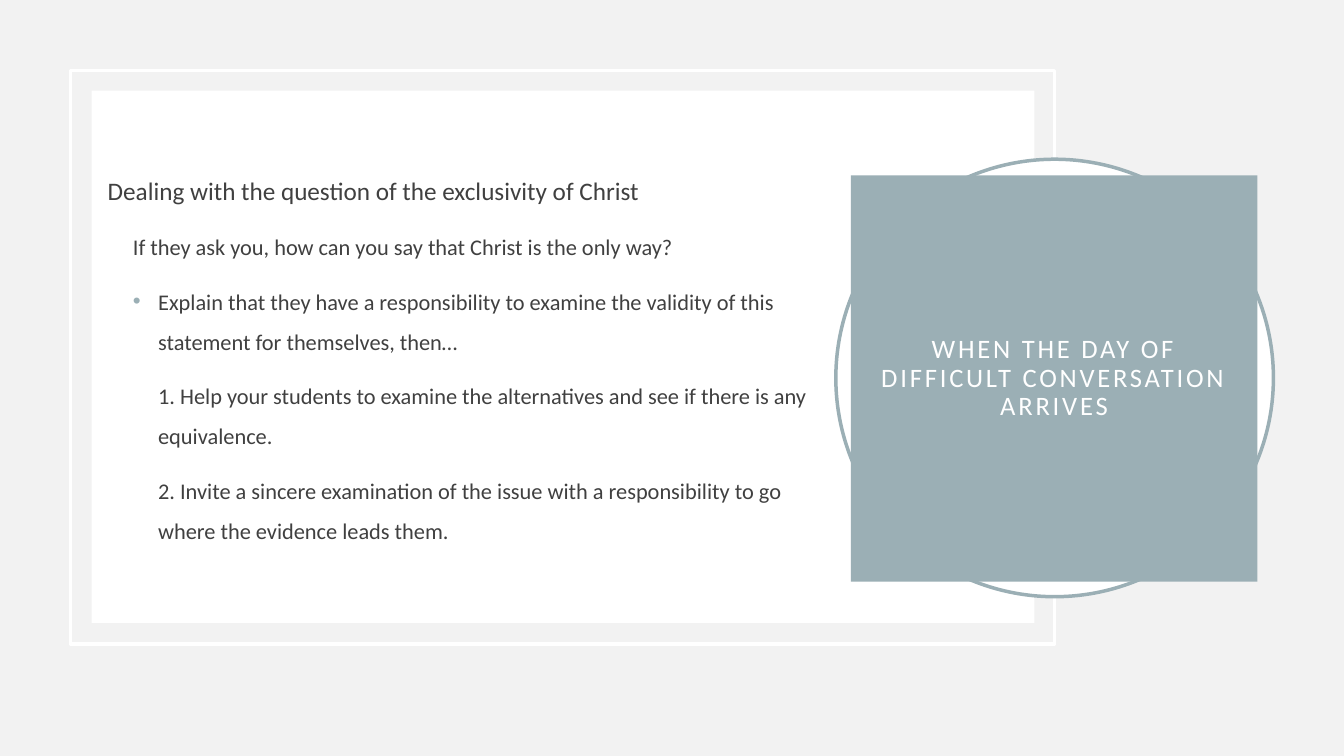
from dataclasses import dataclass
from typing import Optional

from lxml import etree
from pptx import Presentation
from pptx.dml.color import RGBColor
from pptx.enum import shapes, text
from pptx.oxml import ns
from pptx.util import Inches, Pt


@dataclass(frozen=True)
class Theme:
    font: str = "Calibri"
    backdrop: str = "F2F2F2"
    white: str = "FFFFFF"
    ink: str = "404040"
    accent: str = "9BAFB5"
    title_size: float = 19
    lead_size: float = 18
    body_size: float = 16
    outline: float = 2.5


@dataclass(frozen=True)
class Panel:
    kind: shapes.MSO_SHAPE
    box: tuple[float, float, float, float]
    fill: Optional[str] = None
    line: Optional[str] = None


@dataclass(frozen=True)
class Point:
    words: str
    size: float
    level: int = 0
    left: float = 0
    bullet: bool = False


THEME = Theme()
TITLE = "WHEN THE DAY OF DIFFICULT CONVERSATION ARRIVES"
TITLE_BOX = (8.44, 1.74, 4.03, 4.03)
BODY_BOX = (0.97, -0.22, 7.31, 7.43)
HANG = 0.25

PANELS = [
    Panel(shapes.MSO_SHAPE.RECTANGLE, (0.7, 0.7, 9.76, 5.69), line=THEME.white),
    Panel(shapes.MSO_SHAPE.RECTANGLE, (0.91, 0.9, 9.35, 5.28), fill=THEME.white),
    Panel(shapes.MSO_SHAPE.OVAL, (8.29, 1.58, 4.34, 4.34), THEME.white, THEME.accent),
]

POINTS = [
    Point("Dealing with the question of the exclusivity of Christ", THEME.lead_size),
    Point("If they ask you, how can you say that Christ is the only way?",
          THEME.body_size, 1, 0.25),
    Point("Explain that they have a responsibility to examine the validity of this "
          "statement for themselves, then…", THEME.body_size, 1, 0.5, True),
    Point("1. Help your students to examine the alternatives and see if there is any "
          "equivalence.", THEME.body_size, 2, 0.5),
    Point("2. Invite a sincere examination of the issue with a responsibility to go "
          "where the evidence leads them.", THEME.body_size, 2, 0.5),
]


def apply(target, **values) -> None:
    for name, value in values.items():
        setattr(target, name, value)


def place(sp, box: tuple[float, float, float, float]) -> None:
    apply(sp, **dict(zip(("left", "top", "width", "height"), map(Inches, box))))


def style_run(r, size: float, color: str) -> None:
    apply(r.font, name=THEME.font, size=Pt(size))
    r.font.color.rgb = RGBColor.from_string(color)


def draw_panel(slide, panel: Panel) -> None:
    sp = slide.shapes.add_shape(panel.kind, *map(Inches, panel.box))
    sp.shadow.inherit = False
    if panel.fill:
        sp.fill.solid()
        sp.fill.fore_color.rgb = RGBColor.from_string(panel.fill)
    else:
        sp.fill.background()
    if panel.line:
        sp.line.color.rgb = RGBColor.from_string(panel.line)
        sp.line.width = Pt(THEME.outline)
    else:
        sp.line.fill.background()


def write_point(p, point: Point) -> None:
    apply(p, level=point.level, line_spacing=1.5, space_before=Pt(10))
    pPr = p._p.get_or_add_pPr()
    pPr.set("marL", str(Inches(point.left)))
    pPr.set("indent", str(Inches(-HANG if point.bullet else 0)))
    if point.bullet:
        color = etree.SubElement(pPr, ns.qn("a:buClr"))
        etree.SubElement(color, ns.qn("a:srgbClr"), val=THEME.accent)
        etree.SubElement(pPr, ns.qn("a:buFont"), typeface="Arial")
        etree.SubElement(pPr, ns.qn("a:buChar"), char="•")
    r = p.add_run()
    r.text = point.words
    style_run(r, point.size, THEME.ink)


def draw_body(slide) -> None:
    tf = slide.shapes.add_textbox(*map(Inches, BODY_BOX)).text_frame
    apply(tf, word_wrap=True, vertical_anchor=text.MSO_ANCHOR.MIDDLE)
    for i, point in enumerate(POINTS):
        write_point(tf.add_paragraph() if i else tf.paragraphs[0], point)


def draw_title(slide) -> None:
    sp = slide.shapes.title
    place(sp, TITLE_BOX)
    sp.fill.solid()
    sp.fill.fore_color.rgb = RGBColor.from_string(THEME.accent)
    tf = sp.text_frame
    sides = ("left", "top", "right", "bottom")
    apply(tf, word_wrap=True, auto_size=text.MSO_AUTO_SIZE.NONE,
          vertical_anchor=text.MSO_ANCHOR.MIDDLE,
          **{f"margin_{side}": Inches(0.2) for side in sides})
    p = tf.paragraphs[0]
    apply(p, alignment=text.PP_ALIGN.CENTER, line_spacing=0.9)
    r = p.add_run()
    r.text = TITLE
    style_run(r, THEME.title_size, THEME.white)
    r.font._element.set("spc", "200")
    # Bring the title in front of the ring
    slide.shapes._spTree.append(sp._element)


def main() -> None:
    prs = Presentation()
    apply(prs, slide_width=Inches(13.33), slide_height=Inches(7.5))
    slide = prs.slides.add_slide(prs.slide_layouts[5])

    # Background
    slide.background.fill.solid()
    slide.background.fill.fore_color.rgb = RGBColor.from_string(THEME.backdrop)

    # Frame, card and text, then the ring and title on top
    frame, card, ring = PANELS
    draw_panel(slide, frame)
    draw_panel(slide, card)
    draw_body(slide)
    draw_panel(slide, ring)
    draw_title(slide)
    prs.save("out.pptx")


if __name__ == "__main__":
    main()
